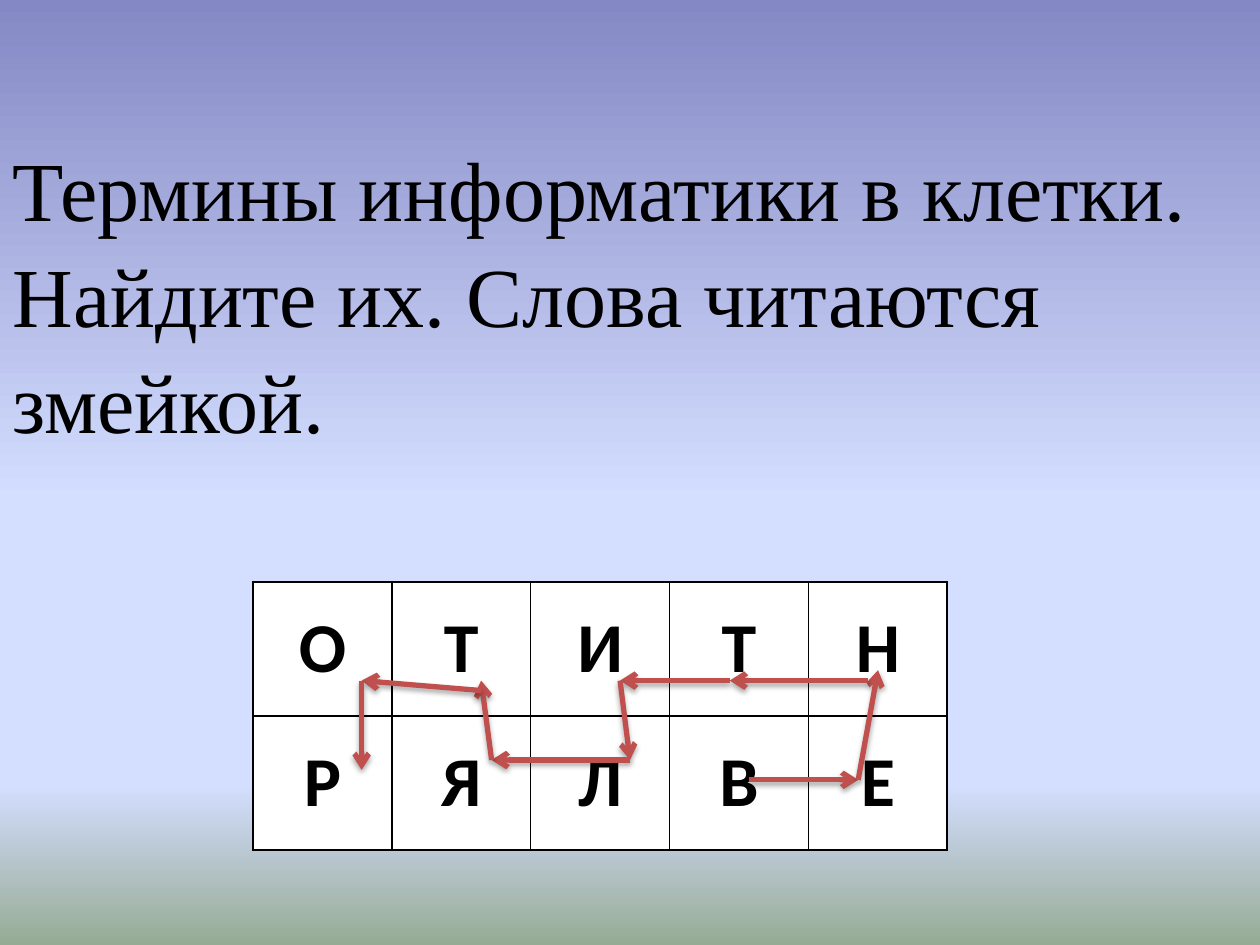
from lxml.etree import fromstring
from pptx import Presentation
from pptx.dml.color import RGBColor
from pptx.enum.shapes import MSO_CONNECTOR
from pptx.enum.text import MSO_ANCHOR, MSO_AUTO_SIZE, PP_ALIGN
from pptx.util import Cm, Pt

INK = {"text": "000000", "cell": "FFFFFF", "arrow": "C0504D",
       "sky": "8488C4", "haze": "D4DEFF", "grass": "96AB94"}
NS = ('xmlns:a="http://schemas.openxmlformats.org/drawingml/2006/main" '
      'xmlns:p="http://schemas.openxmlformats.org/presentationml/2006/main"')


def style(obj, vals):
    for key, val in vals.items():
        setattr(obj, key, val)


def color(name):
    return RGBColor.from_string(INK[name])


deck = Presentation()
style(deck, {"slide_width": Cm(25.4), "slide_height": Cm(19.05)})
slide = deck.slides.add_slide(deck.slide_layouts[5])

# Background: sky fading down to grass
stops = "".join(
    f'<a:gs pos="{pos * 1000}"><a:srgbClr val="{INK[name]}"/></a:gs>'
    for pos, name in [(0, "sky"), (53, "haze"), (83, "haze"), (100, "grass")])
slide._element.cSld.insert(0, fromstring(
    f'<p:bg {NS}><p:bgPr><a:gradFill rotWithShape="1"><a:gsLst>{stops}</a:gsLst>'
    '<a:lin ang="5400000" scaled="0"/></a:gradFill><a:effectLst/></p:bgPr></p:bg>'))

# Title
title = slide.shapes.title
style(title, {"left": Cm(0), "top": Cm(2.55), "width": Cm(25.4), "height": Cm(6.4)})
frame = title.text_frame
frame.text = "Термины информатики в клетки. Найдите их. Слова читаются змейкой."
style(frame, {"word_wrap": True, "auto_size": MSO_AUTO_SIZE.NONE,
              "vertical_anchor": MSO_ANCHOR.TOP})
para = frame.paragraphs[0]
style(para, {"alignment": PP_ALIGN.LEFT, "line_spacing": 1.05})
font = para.runs[0].font
style(font, {"name": "Times New Roman", "size": Pt(48)})
font.color.rgb = color("text")

# Letter grid
rows = ["ОТИТН", "РЯЛВЕ"]
wide, high = Cm(2.8), Cm(2.7)
grid = slide.shapes.add_table(2, 5, Cm(5.1), Cm(11.73), wide * 5, high * 2).table
style(grid, {"first_row": False, "horz_banding": False})
for col in grid.columns:
    col.width = wide
for r, word in enumerate(rows):
    grid.rows[r].height = high
    for c, sign in enumerate(word):
        cell = grid.cell(r, c)
        cell.text = sign
        style(cell, {"vertical_anchor": MSO_ANCHOR.MIDDLE,
                     **{f"margin_{side}": Cm(0.08)
                        for side in ("left", "right", "top", "bottom")}})
        para = cell.text_frame.paragraphs[0]
        para.alignment = PP_ALIGN.CENTER
        font = para.runs[0].font
        style(font, {"name": "Calibri", "size": Pt(40), "bold": True})
        font.color.rgb = color("text")
        props = cell._tc.get_or_add_tcPr()
        for side in ("lnL", "lnR", "lnT", "lnB"):
            props.append(fromstring(
                f'<a:{side} {NS} w="12700"><a:solidFill>'
                f'<a:srgbClr val="{INK["text"]}"/></a:solidFill></a:{side}>'))
        cell.fill.solid()
        cell.fill.fore_color.rgb = color("cell")

# Snake of arrows through the letters: x1, y1, x2, y2
steps = [
    (15.09, 15.72, 17.3, 15.72),
    (17.3, 15.72, 17.7, 13.51),
    (17.5, 13.72, 14.71, 13.72),
    (14.71, 13.72, 12.5, 13.72),
    (12.5, 13.72, 12.7, 15.32),
    (12.7, 15.32, 9.91, 15.32),
    (9.91, 15.32, 9.7, 13.72),
    (9.7, 13.92, 7.29, 13.72),
    (7.29, 13.72, 7.29, 15.52),
]
for step in steps:
    arrow = slide.shapes.add_connector(MSO_CONNECTOR.STRAIGHT, *map(Cm, step))
    arrow.line.width = Pt(3)
    arrow.line.color.rgb = color("arrow")
    arrow.line._get_or_add_ln().append(fromstring(f'<a:tailEnd {NS} type="arrow"/>'))
    arrow._element.spPr.append(fromstring(
        f'<a:effectLst {NS}><a:outerShdw blurRad="40000" dist="23000" dir="5400000" '
        f'rotWithShape="0"><a:srgbClr val="{INK["text"]}"><a:alpha val="35000"/>'
        '</a:srgbClr></a:outerShdw></a:effectLst>'))

deck.save("out.pptx")
